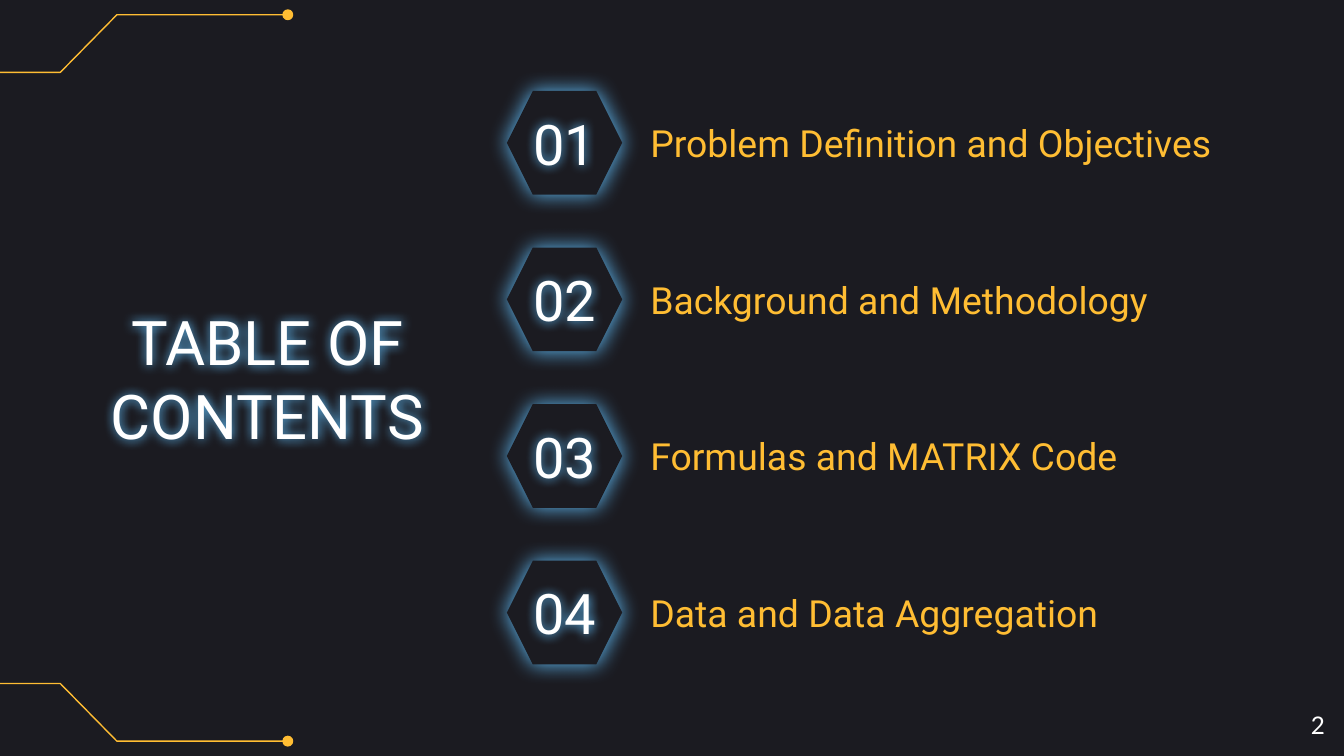
from dataclasses import dataclass

from lxml.etree import SubElement
from pptx import Presentation
from pptx.dml.color import RGBColor
from pptx.enum.shapes import MSO_SHAPE as Shp
from pptx.enum.text import MSO_ANCHOR as Anchor, PP_ALIGN as Align
from pptx.oxml.ns import qn
from pptx.util import Cm, Pt

COLORS = {"bg": "1B1B21", "accent": "FFBD33", "glow": "60BBF5", "text": "FFFFFF"}
WIDTH, HEIGHT = 25.4, 14.29
FIRST_ROW, ROW_STEP = 2.7, 2.96
HEX_CENTER = 10.67
HEX_GLOW, TEXT_GLOW = 11.2, 6


@dataclass
class Label:
    text: str
    left: float
    top: float
    width: float
    height: float
    size: float
    color: str = "text"
    align: Align = Align.CENTER
    anchor: Anchor = Anchor.MIDDLE
    font: str = "Roboto"
    glow: float = 0


def rgb(name: str) -> RGBColor:
    return RGBColor.from_string(COLORS[name])


def add_glow(sp, blur: float) -> None:
    sp.shadow.inherit = False
    effects = sp._element.spPr.find(qn("a:effectLst"))
    shadow = SubElement(effects, qn("a:outerShdw"), blurRad=str(Pt(blur)),
                        dist="0", dir="0", algn="bl", rotWithShape="0")
    SubElement(shadow, qn("a:srgbClr"), val=COLORS["glow"])


def add_label(s, label: Label) -> None:
    sp = s.shapes.add_textbox(Cm(label.left), Cm(label.top), Cm(label.width), Cm(label.height))
    tf = sp.text_frame
    tf.word_wrap = True
    tf.vertical_anchor = label.anchor
    tf.margin_left = tf.margin_right = tf.margin_top = tf.margin_bottom = Cm(0.25)
    p = tf.paragraphs[0]
    p.text = label.text
    p.alignment = label.align
    p.font.size = Pt(label.size)
    p.font.name = label.font
    p.font.color.rgb = rgb(label.color)
    if label.glow:
        add_glow(sp, label.glow)


def add_circuit(s, outer: float, inner: float) -> None:
    points = [(-0.36, inner), (1.14, inner), (2.21, outer), (5.44, outer)]
    start, *rest = [(Cm(x), Cm(y)) for x, y in points]
    fb = s.shapes.build_freeform(*start)
    fb.add_line_segments(rest, close=False)
    trace = fb.convert_to_shape()
    trace.fill.background()
    dot = s.shapes.add_shape(Shp.OVAL, Cm(5.35), Cm(outer - 0.09), Cm(0.18), Cm(0.18))
    dot.fill.solid()
    dot.fill.fore_color.rgb = rgb("accent")
    for sp in (trace, dot):
        sp.line.color.rgb = rgb("accent")
        sp.line.width = Pt(0.75)
        sp.shadow.inherit = False


def add_hexagon(s, center: float) -> None:
    w, h = 2.18, 1.96
    sp = s.shapes.add_shape(Shp.HEXAGON, Cm(HEX_CENTER - w / 2), Cm(center - h / 2), Cm(w), Cm(h))
    sp.adjustments[0] = 0.25
    sp.fill.solid()
    sp.fill.fore_color.rgb = rgb("bg")
    sp.line.fill.background()
    add_glow(sp, HEX_GLOW)


def add_topic(s, index: int, topic: str) -> None:
    center = FIRST_ROW + index * ROW_STEP
    add_hexagon(s, center)
    add_label(s, Label(f"{index + 1:02}", HEX_CENTER - 0.98, center - 0.79,
                       1.96, 1.58, 30, glow=TEXT_GLOW))
    add_label(s, Label(topic, 12.04, center - 0.46, 12.73, 0.92, 20,
                       color="accent", align=Align.LEFT))


def main() -> None:
    prs = Presentation()
    prs.slide_width, prs.slide_height = Cm(WIDTH), Cm(HEIGHT)
    s = prs.slides.add_slide(prs.slide_layouts[6])
    s.background.fill.solid()
    s.background.fill.fore_color.rgb = rgb("bg")

    add_circuit(s, 0.28, 1.37)
    add_circuit(s, HEIGHT - 0.28, HEIGHT - 1.37)

    topics = ["Problem Definition and Objectives", "Background and Methodology",
              "Formulas and MATRIX Code", "Data and Data Aggregation"]
    for index, topic in enumerate(topics):
        add_topic(s, index, topic)

    add_label(s, Label("TABLE OF CONTENTS", 1.32, 5.36, 7.47, 3.56, 33, glow=TEXT_GLOW))
    add_label(s, Label("2", 23.77, 13.18, 1.52, 1.09, 13, align=Align.RIGHT,
                       anchor=Anchor.TOP, font="Lato"))
    prs.save("out.pptx")


if __name__ == "__main__":
    main()
